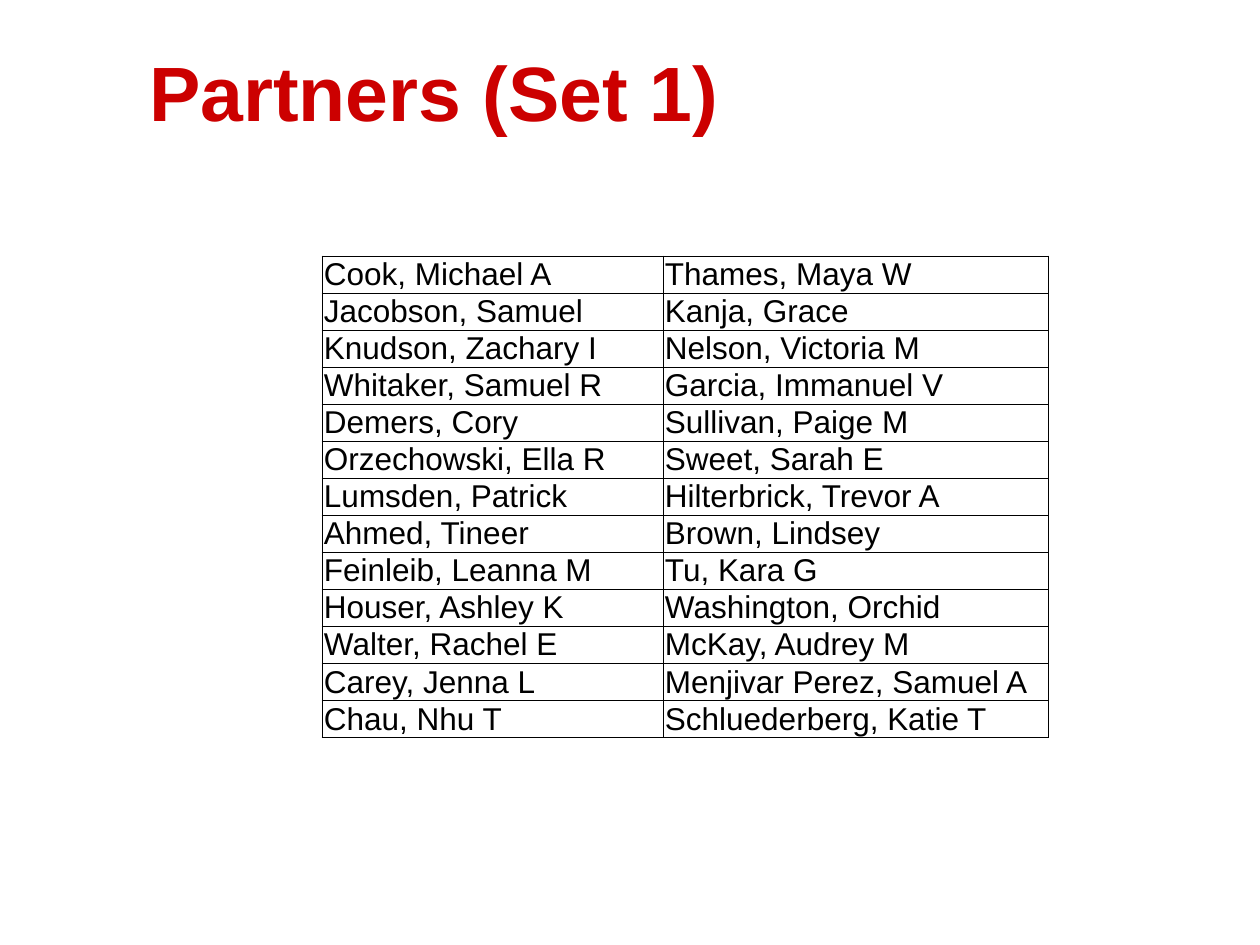
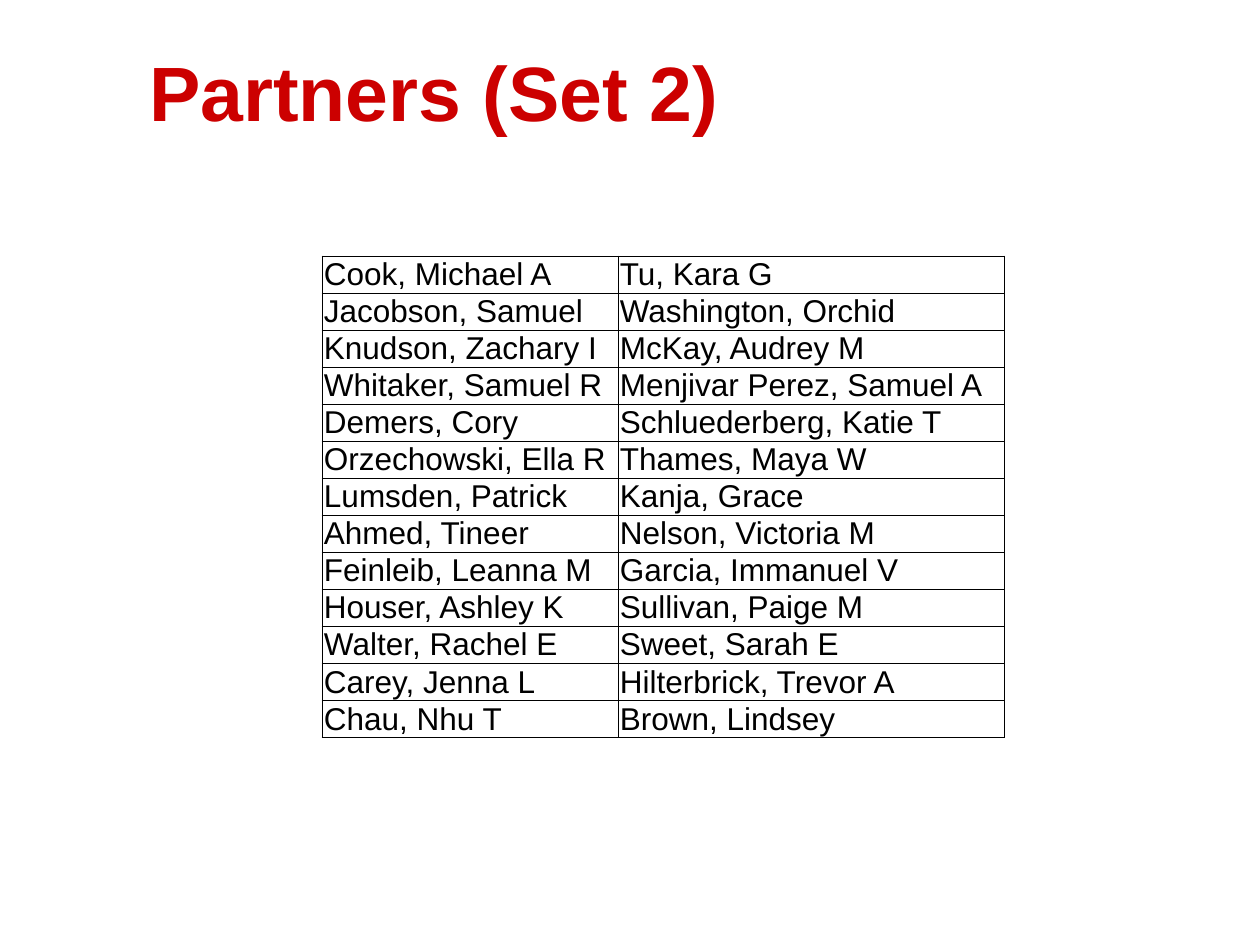
from dataclasses import dataclass
from lxml.etree import SubElement
from pptx import Presentation
from pptx.dml.color import RGBColor as RGB
from pptx.enum.text import MSO_ANCHOR as Anchor
from pptx.oxml.ns import qn
from pptx.util import Emu, Pt


@dataclass(frozen=True)
class Theme:
    font: str = "Arial"
    title: RGB = RGB(0xCC, 0x00, 0x00)
    ink: RGB = RGB(0x00, 0x00, 0x00)
    paper: RGB = RGB(0xFF, 0xFF, 0xFF)
    title_size: Pt = Pt(44)
    name_size: Pt = Pt(18)
    name_leading: Pt = Pt(20.5)
    rule: Pt = Pt(0.5)


THEME = Theme()
TABLE_LEFT, TABLE_TOP, TABLE_HEIGHT = 322, 256, 482

FIRST_PARTNERS = [
    "Cook, Michael A", "Jacobson, Samuel", "Knudson, Zachary I",
    "Whitaker, Samuel R", "Demers, Cory", "Orzechowski, Ella R",
    "Lumsden, Patrick", "Ahmed, Tineer", "Feinleib, Leanna M",
    "Houser, Ashley K", "Walter, Rachel E", "Carey, Jenna L", "Chau, Nhu T",
]
SECOND_PARTNERS = [
    "Thames, Maya W", "Kanja, Grace", "Nelson, Victoria M",
    "Garcia, Immanuel V", "Sullivan, Paige M", "Sweet, Sarah E",
    "Hilterbrick, Trevor A", "Brown, Lindsey", "Tu, Kara G",
    "Washington, Orchid", "McKay, Audrey M", "Menjivar Perez, Samuel A",
    "Schluederberg, Katie T",
]
# Title, places the second list rotates by, column widths
PARTNER_SETS = [
    ("Partners (Set 1)", 0, (341, 385)),
    ("Partners (Set 2)", 8, (296, 386)),
]


def px(count):
    """Turn pixels at 126 to the inch into EMU."""
    return Emu(round(count * 914400 / 126))


def fill_cell(cell, name):
    """Write a name into a white cell with thin borders on all sides."""
    cell.margin_left = cell.margin_right = px(2)
    cell.margin_top, cell.margin_bottom = 0, px(1)
    cell.vertical_anchor = Anchor.BOTTOM
    properties = cell._tc.get_or_add_tcPr()
    for side in ("a:lnL", "a:lnR", "a:lnT", "a:lnB"):
        border = SubElement(properties, qn(side), w=str(THEME.rule))
        color = SubElement(SubElement(border, qn("a:solidFill")), qn("a:srgbClr"))
        color.set("val", str(THEME.ink))
    cell.fill.solid()
    cell.fill.fore_color.rgb = THEME.paper
    cell.text_frame.text = name
    paragraph = cell.text_frame.paragraphs[0]
    paragraph.line_spacing = THEME.name_leading
    font = paragraph.runs[0].font
    font.name, font.size = THEME.font, THEME.name_size
    font.color.rgb = THEME.ink


deck = Presentation()
deck.slide_width, deck.slide_height = px(1260), px(945)

for heading, shift, widths in PARTNER_SETS:
    slide = deck.slides.add_slide(deck.slide_layouts[6])

    title = slide.shapes.add_textbox(px(136), px(38), px(1092), px(157)).text_frame
    title.word_wrap = True
    title.vertical_anchor = Anchor.TOP
    title.margin_left, title.margin_top = px(13), px(7)
    title.text = heading
    font = title.paragraphs[0].runs[0].font
    font.name, font.size, font.bold = THEME.font, THEME.title_size, True
    font.color.rgb = THEME.title

    pairs = list(zip(FIRST_PARTNERS, SECOND_PARTNERS[shift:] + SECOND_PARTNERS[:shift]))
    roster = slide.shapes.add_table(
        len(pairs), 2, px(TABLE_LEFT), px(TABLE_TOP),
        px(sum(widths)), px(TABLE_HEIGHT)).table
    roster.first_row = roster.horz_banding = False
    for column, width in zip(roster.columns, widths):
        column.width = px(width)
    for row, pair in zip(roster.rows, pairs):
        row.height = px(TABLE_HEIGHT) // len(pairs)
        for cell, name in zip(row.cells, pair):
            fill_cell(cell, name)

deck.save("out.pptx")
